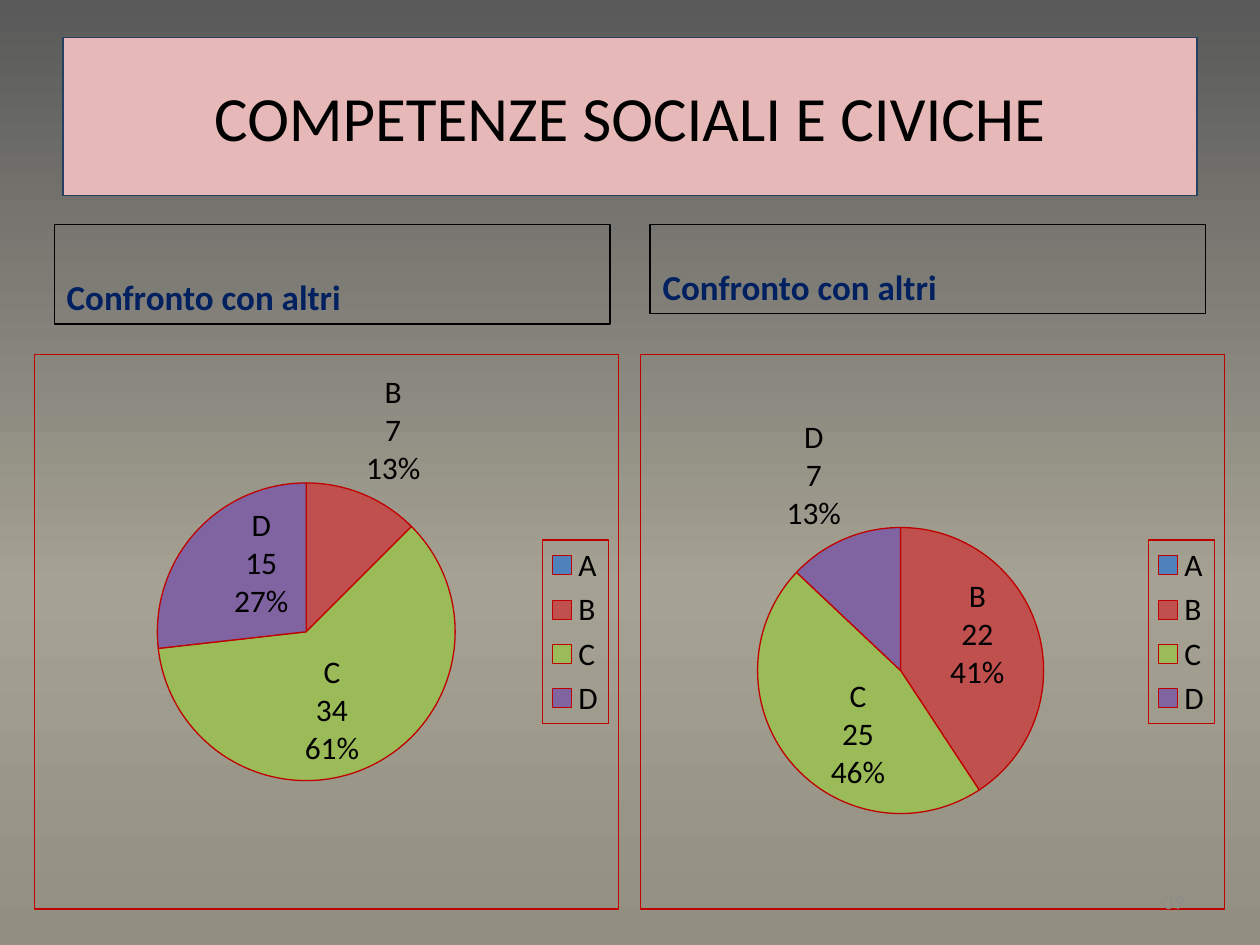
"""Builds a slide comparing two pie charts on social and civic competences."""
from copy import deepcopy

from lxml import etree
from pptx import Presentation
from pptx.chart.data import CategoryChartData
from pptx.dml.color import RGBColor
from pptx.enum.chart import XL_CHART_TYPE as CT, XL_LABEL_POSITION as LP, XL_LEGEND_POSITION as LEG
from pptx.enum.text import MSO_ANCHOR as MA, PP_ALIGN as AL
from pptx.oxml import parse_xml
from pptx.oxml.ns import nsdecls, qn
from pptx.util import Pt

BLACK = RGBColor(0, 0, 0)
NAVY = RGBColor(0x00, 0x20, 0x60)
TITLE_LINE = RGBColor(0x25, 0x40, 0x61)
PINK = RGBColor(0xE6, 0xB9, 0xB8)
RED = RGBColor(0xC0, 0x00, 0x00)
GREY = RGBColor(0x8C, 0x8C, 0x8C)
SLICES = [RGBColor(0x4F, 0x81, 0xBD), RGBColor(0xC0, 0x50, 0x4D),
          RGBColor(0x9B, 0xBB, 0x59), RGBColor(0x80, 0x64, 0xA2)]
BACKGROUND = [(0, RGBColor(0x59, 0x59, 0x59)), (0.62, RGBColor(0xA5, 0xA2, 0x93)),
              (1, RGBColor(0x92, 0x8F, 0x80))]
FONT = "Calibri"


def set_text(sp, text, size, color, bold=False, align=AL.LEFT, anchor=MA.MIDDLE, line=None):
    tf = sp.text_frame
    tf.word_wrap = True
    tf.vertical_anchor = anchor
    p = tf.paragraphs[0]
    p.alignment = align
    r = p.add_run()
    r.text = text
    r.font.name, r.font.size, r.font.bold = FONT, Pt(size), bold
    r.font.color.rgb = color
    if line is not None:
        sp.line.color.rgb = line
        sp.line.width = Pt(0.75)


def border():
    return parse_xml(f'<c:spPr {nsdecls("c", "a")}><a:noFill/><a:ln w="{Pt(0.75)}"><a:solidFill>'
                     f'<a:srgbClr val="{RED}"/></a:solidFill></a:ln></c:spPr>')


prs = Presentation()
prs.slide_width, prs.slide_height = Pt(720), Pt(540)
s = prs.slides.add_slide(prs.slide_layouts[5])

fill = s.background.fill
fill.gradient()
fill.gradient_angle = 270
stops = s.element.find(".//" + qn("a:gsLst"))
stops.append(deepcopy(stops[-1]))
for stop, (position, color) in zip(fill.gradient_stops, BACKGROUND):
    stop.position = position
    stop.color.rgb = color

title = s.shapes.title
title.left, title.top, title.width, title.height = Pt(36), Pt(21.6), Pt(648), Pt(90)
title.fill.solid()
title.fill.fore_color.rgb = PINK
set_text(title, "COMPETENZE SOCIALI E CIVICHE", 36, BLACK, align=AL.CENTER, line=TITLE_LINE)

panels = [
    (31, 56.9, 19.5, (0, 7, 34, 15), (0.21, 0.23, 0.51, 0.54)),
    (371.5, 51.1, 365.8, (0, 22, 25, 7), (0.2, 0.31, 0.49, 0.52)),
]
for head_left, head_height, chart_left, values, plot_box in panels:
    heading = s.shapes.add_textbox(Pt(head_left), Pt(128.2), Pt(317.5), Pt(head_height))
    set_text(heading, "Confronto con altri", 20, NAVY, bold=True, anchor=MA.BOTTOM, line=BLACK)

    data = CategoryChartData()
    data.categories = list("ABCD")
    data.add_series("Series 1", values)
    chart = s.shapes.add_chart(CT.PIE, Pt(chart_left), Pt(202.3), Pt(334.4), Pt(317.5), data).chart
    chart.has_title = False
    chart.font.name, chart.font.size = FONT, Pt(18)
    chart.font.color.rgb = BLACK
    chart.has_legend = True
    chart.legend.position = LEG.RIGHT
    chart.legend.include_in_layout = False
    chart.element.find(qn("c:chart")).addnext(border())
    chart.element.find(".//" + qn("c:legend")).find(qn("c:overlay")).addnext(border())

    plot = chart.plots[0]
    plot.vary_by_categories = True
    series = plot.series[0]
    for i, color in enumerate(SLICES):
        fmt = series.points[i].format
        fmt.fill.solid()
        fmt.fill.fore_color.rgb = color
        fmt.line.color.rgb = RED
        fmt.line.width = Pt(0.75)

    labels = series.data_labels
    labels.show_category_name = labels.show_value = labels.show_percentage = True
    labels.show_legend_key = labels.show_series_name = False
    labels.position = LP.BEST_FIT
    d_lbls = series.data_labels._element
    d_lbls.insert(0, parse_xml(f'<c:dLbl {nsdecls("c")}><c:idx val="0"/><c:delete val="1"/></c:dLbl>'))
    separator = etree.Element(qn("c:separator"))
    separator.text = "\n"
    d_lbls.find(qn("c:showBubbleSize")).addnext(separator)

    area = chart.element.find(".//" + qn("c:plotArea"))
    for old in area.findall(qn("c:layout")):
        area.remove(old)
    modes = '<c:layoutTarget val="inner"/><c:xMode val="edge"/><c:yMode val="edge"/>'
    box = "".join(f'<c:{name} val="{v}"/>' for name, v in zip("xywh", plot_box))
    area.insert(0, parse_xml(f'<c:layout {nsdecls("c")}><c:manualLayout>{modes}{box}</c:manualLayout></c:layout>'))

number = s.shapes.add_textbox(Pt(516), Pt(500.5), Pt(168), Pt(28.8))
set_text(number, "39", 12, GREY, align=AL.RIGHT)

prs.save("out.pptx")
